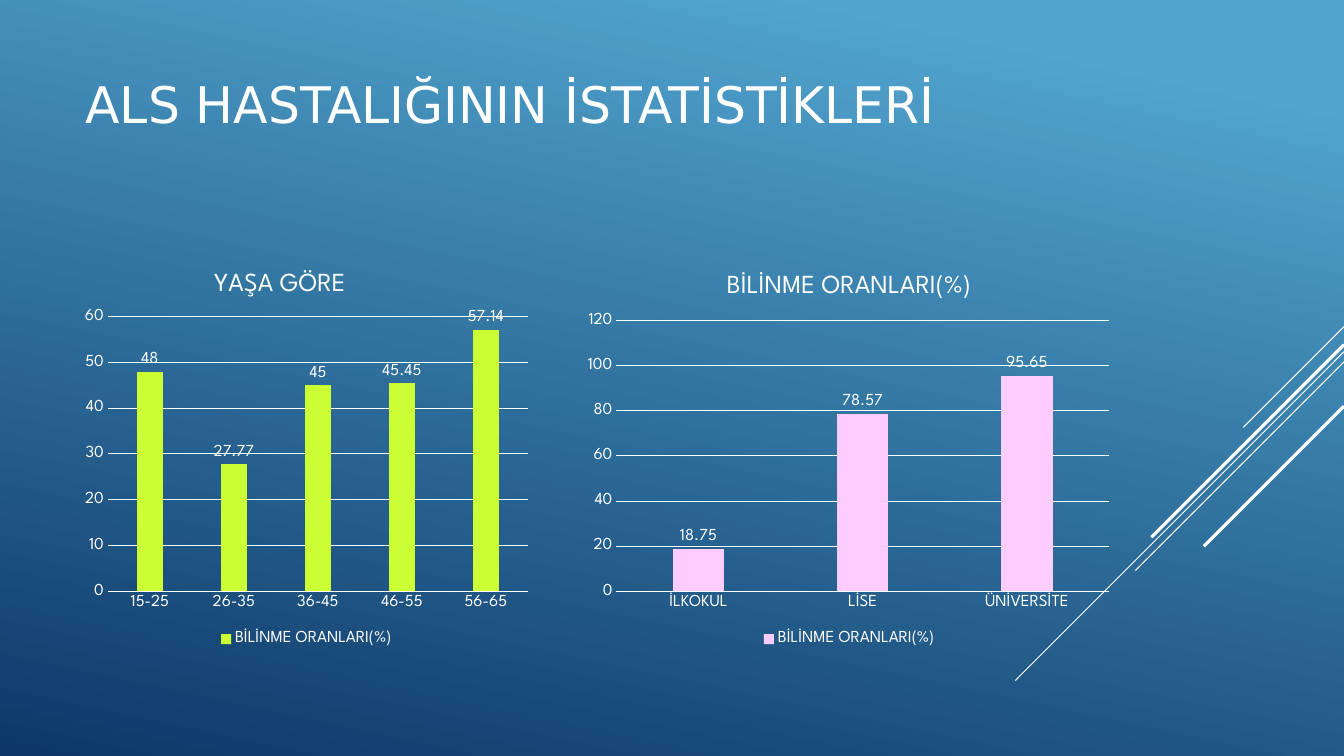
from dataclasses import dataclass

from lxml.etree import SubElement
from pptx import Presentation
from pptx.chart.data import CategoryChartData
from pptx.dml.color import RGBColor
from pptx.enum.chart import XL_CHART_TYPE, XL_LABEL_POSITION, XL_LEGEND_POSITION, XL_TICK_MARK
from pptx.enum.shapes import MSO_CONNECTOR
from pptx.enum.text import MSO_ANCHOR
from pptx.oxml.ns import qn
from pptx.util import Inches, Pt

COLS, ROWS = 80, 45  # square grid cells, six to the inch


@dataclass(frozen=True)
class Theme:
    white: str = "FFFFFF"
    sky: str = "51A5CF"
    navy: str = "0D3868"
    lime: str = "CCFF33"
    pink: str = "FFCCFF"
    head: str = "DejaVu Sans"
    body: str = "League Spartan"
    big: float = 36
    mid: float = 18.6
    small: float = 12
    thin: float = 0.75
    thick: float = 2.25


def style(font, size, face, color):
    font.size, font.name, font.bold = Pt(size), face, False
    font.color.rgb = RGBColor.from_string(color)


def write(frame, text, **form):
    """Put one formatted run of text into a frame."""
    run = frame.paragraphs[0].add_run()
    run.text = text
    style(run.font, **form)


def place(parent, index, **shares):
    """Fix a chart part at shares of the chart's size."""
    for old in parent.findall(qn("c:layout")):
        parent.remove(old)
    layout = SubElement(parent, qn("c:layout"))
    parent.insert(index, layout)
    manual = SubElement(layout, qn("c:manualLayout"))
    if "w" in shares:
        SubElement(manual, qn("c:layoutTarget")).set("val", "inner")
    for key in ("x", "y"):
        SubElement(manual, qn(f"c:{key}Mode")).set("val", "edge")
    for key, share in shares.items():
        SubElement(manual, qn(f"c:{key}")).set("val", str(share))


class Board:
    def __init__(self, deck, theme):
        self.theme = theme
        self.slide = deck.slides.add_slide(deck.slide_layouts[6])
        self.cell = deck.slide_width / COLS

    def grid(self, *cells):
        return [round(cell * self.cell) for cell in cells]

    def paint(self, angle, *stops):
        fill = self.slide.background.fill
        fill.gradient()
        fill.gradient_angle = angle
        for stop, (spot, color) in zip(fill.gradient_stops, stops):
            stop.position = spot
            stop.color.rgb = RGBColor.from_string(color)

    def ray(self, top, run, width):
        """Draw a 45 degree line down and left from the right edge."""
        ends = self.grid(COLS, top, COLS - run, top + run)
        ray = self.slide.shapes.add_connector(MSO_CONNECTOR.STRAIGHT, *ends)
        ray.line.width = Pt(width)
        ray.line.color.rgb = RGBColor.from_string(self.theme.white)
        SubElement(ray._element.spPr, qn("a:effectLst"))

    def title(self, text, *box):
        look = self.theme
        frame = self.slide.shapes.add_textbox(*self.grid(*box)).text_frame
        frame.word_wrap = True
        frame.vertical_anchor = MSO_ANCHOR.MIDDLE
        write(frame, text, size=look.big, face=look.head, color=look.white)

    def chart(self, box, title, name, rates, color, top, step, plot, spot=None):
        look = self.theme
        white = RGBColor.from_string(look.white)
        note = dict(size=look.small, face=look.body, color=look.white)
        data = CategoryChartData()
        data.categories = list(rates)
        data.add_series(name, list(rates.values()))
        chart = self.slide.shapes.add_chart(
            XL_CHART_TYPE.COLUMN_CLUSTERED, *self.grid(*box), data).chart
        style(chart.font, **note)

        # Title and legend
        chart.has_title = True
        write(chart.chart_title.text_frame, title, **{**note, "size": look.mid})
        chart.chart_title.include_in_layout = False
        if spot:
            place(chart.chart_title._element, 1, **spot)
        chart.has_legend = True
        chart.legend.position = XL_LEGEND_POSITION.BOTTOM
        chart.legend.include_in_layout = False
        style(chart.legend.font, **note)

        # Axes
        for axis in (chart.category_axis, chart.value_axis):
            axis.major_tick_mark = axis.minor_tick_mark = XL_TICK_MARK.NONE
            style(axis.tick_labels.font, **note)
        scale = chart.value_axis
        scale.minimum_scale, scale.maximum_scale, scale.major_unit = 0, top, step
        scale.format.line.fill.background()
        for line in (chart.category_axis.format.line, scale.major_gridlines.format.line):
            line.color.rgb = white
            line.width = Pt(look.thin)

        # Columns and their labels
        bars = chart.plots[0]
        bars.gap_width, bars.overlap, bars.vary_by_categories = 219, -27, False
        fill = bars.series[0].format.fill
        fill.solid()
        fill.fore_color.rgb = RGBColor.from_string(color)
        labels = bars.series[0].data_labels
        labels.show_value = True
        labels.position = XL_LABEL_POSITION.OUTSIDE_END
        style(labels.font, **note)
        place(chart._chartSpace.chart.plotArea, 0, **plot)


def main():
    deck = Presentation()
    deck.slide_width, deck.slide_height = Inches(COLS / 6), Inches(ROWS / 6)
    look = Theme()
    board = Board(deck, look)

    # Backdrop
    board.paint(258, (0.1, look.sky), (1, look.navy))
    for top, run, width in (
        (19.44, 6, look.thin),
        (20.94, 19.56, look.thin),
        (21.54, 12.42, look.thin),
        (20.52, 11.46, look.thick),
        (24.18, 8.34, look.thick),
    ):
        board.ray(top, run, width)

    # Heading
    board.title("ALS HASTALIĞININ İSTATİSTİKLERİ", 4.5, 1.2, 67.32, 9.9)

    # Awareness by age and by schooling
    name = "BİLİNME ORANLARI(%)"
    ages = {"15-25": 48, "26-35": 27.77, "36-45": 45, "46-55": 45.45, "56-65": 57.14}
    schools = {"İLKOKUL": 18.75, "LİSE": 78.57, "ÜNİVERSİTE": 95.65}
    board.chart((4.5, 15.06, 27.48, 23.7), "YAŞA GÖRE", name, ages, look.lime, 60, 10,
                dict(x=0.07, y=0.16, w=0.91, h=0.69), dict(x=0.29, y=0.03))
    board.chart((34.44, 15.06, 32.22, 23.7), name, name, schools, look.pink, 120, 20,
                dict(x=0.07, y=0.17, w=0.91, h=0.68))
    deck.save("out.pptx")


if __name__ == "__main__":
    main()
